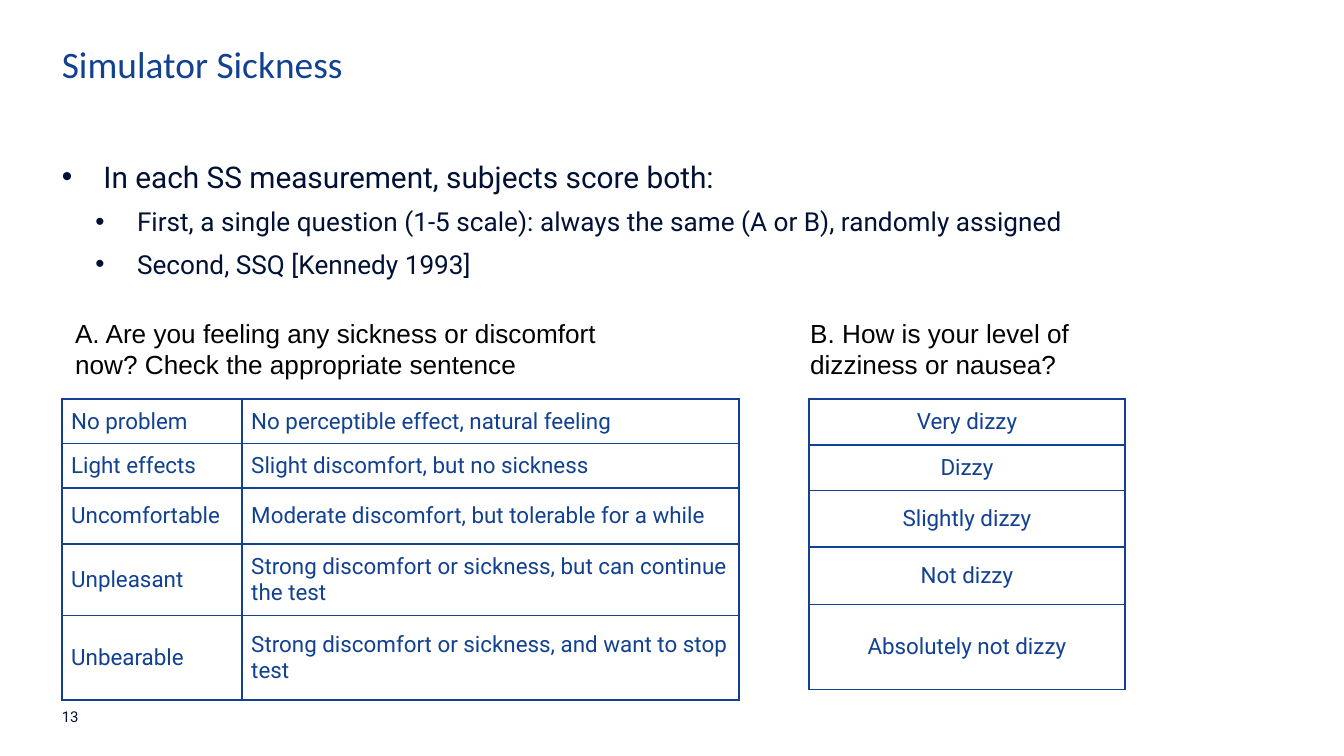
from dataclasses import dataclass

from lxml import etree
from pptx import Presentation
from pptx.dml.color import RGBColor
from pptx.enum import text as t
from pptx.oxml import ns
from pptx.util import Inches, Pt


@dataclass(frozen=True)
class Theme:
    navy: str = "001135"
    blue: str = "124191"
    black: str = "000000"
    heading: str = "Calibri"
    body: str = "Roboto"
    question: str = "Arial"
    bullet: str = "Arial"
    title_size: int = 20
    lead_size: int = 16
    detail_size: int = 14
    cell_size: int = 12
    number_size: int = 8
    border_width: int = 1


THEME = Theme()
LEFT = 0.46
TABLE_TOP = 2.97
QUESTION_TOP = 2.31
CELL_INSET = (0.07, 0.06)

TITLE = "Simulator Sickness"
PAGE_NUMBER = "13"
BULLETS = [
    (0, "In each SS measurement, subjects score both:"),
    (1, "First, a single question (1-5 scale): always the same (A or B), randomly assigned"),
    (1, "Second, SSQ [Kennedy 1993]"),
]
SCALES = [
    {
        "question": "A. Are you feeling any sickness or discomfort now? Check the appropriate sentence",
        "question_left": LEFT,
        "question_width": 4.39,
        "left": LEFT,
        "columns": [1.34, 3.7],
        "heights": [0.33, 0.33, 0.42, 0.53, 0.63],
        "align": t.PP_ALIGN.LEFT,
        "rows": [
            ("No problem", "No perceptible effect, natural feeling"),
            ("Light effects", "Slight discomfort, but no sickness"),
            ("Uncomfortable", "Moderate discomfort, but tolerable for a while"),
            ("Unpleasant", "Strong discomfort or sickness, but can continue the test"),
            ("Unbearable", "Strong discomfort or sickness, and want to stop test"),
        ],
    },
    {
        "question": "B. How is your level of dizziness or nausea?",
        "question_left": 5.93,
        "question_width": 2.44,
        "left": 6.02,
        "columns": [2.35],
        "heights": [0.34, 0.34, 0.42, 0.43, 0.63],
        "align": t.PP_ALIGN.CENTER,
        "rows": [
            ("Very dizzy",),
            ("Dizzy",),
            ("Slightly dizzy",),
            ("Not dizzy",),
            ("Absolutely not dizzy",),
        ],
    },
]


def style(paragraph, name, size, color):
    paragraph.font.name = name
    paragraph.font.size = Pt(size)
    paragraph.font.color.rgb = RGBColor.from_string(color)


def set_insets(target, inset):
    """Set the (horizontal, vertical) margins of a text frame or cell, in inches."""
    target.margin_left = target.margin_right = Inches(inset[0])
    target.margin_top = target.margin_bottom = Inches(inset[1])


def add_frame(page, left, top, width, height, anchor=t.MSO_ANCHOR.TOP, inset=(0, 0)):
    box = page.shapes.add_textbox(Inches(left), Inches(top), Inches(width), Inches(height))
    frame = box.text_frame
    frame.word_wrap = True
    frame.vertical_anchor = anchor
    set_insets(frame, inset)
    return frame


def add_line(frame, words, name, size, color):
    paragraph = frame.paragraphs[0]
    if paragraph.runs:
        paragraph = frame.add_paragraph()
    paragraph.add_run().text = words
    style(paragraph, name, size, color)
    return paragraph


def add_bullet(paragraph, level):
    paragraph.level = level
    paragraph.space_after = Pt(6)
    props = paragraph._p.get_or_add_pPr()
    props.set("marL", str(Inches(0.31 + 0.25 * level)))
    props.set("indent", str(-Inches(0.31)))
    run_defaults = props.find(ns.qn("a:defRPr"))
    run_defaults.addprevious(etree.Element(ns.qn("a:buFont"), typeface=THEME.bullet))
    run_defaults.addprevious(etree.Element(ns.qn("a:buChar"), char="•"))


def add_borders(cell):
    props = cell._tc.get_or_add_tcPr()
    for side in ("lnL", "lnR", "lnT", "lnB"):
        line = etree.SubElement(props, ns.qn(f"a:{side}"), w=str(Pt(THEME.border_width)))
        fill = etree.SubElement(line, ns.qn("a:solidFill"))
        etree.SubElement(fill, ns.qn("a:srgbClr"), val=THEME.blue)


def add_scale(page, scale):
    """Add one rating table and the question above it."""
    rows, columns, heights = scale["rows"], scale["columns"], scale["heights"]
    table = page.shapes.add_table(
        len(rows), len(columns), Inches(scale["left"]), Inches(TABLE_TOP),
        Inches(sum(columns)), Inches(sum(heights))).table
    table.first_row = table.horz_banding = False
    for column, width in zip(table.columns, columns):
        column.width = Inches(width)
    for row, height, labels in zip(table.rows, heights, rows):
        row.height = Inches(height)
        for cell, label in zip(row.cells, labels):
            add_borders(cell)
            cell.fill.background()
            cell.vertical_anchor = t.MSO_ANCHOR.MIDDLE
            set_insets(cell, CELL_INSET)
            paragraph = add_line(cell.text_frame, label, THEME.body, THEME.cell_size, THEME.blue)
            paragraph.alignment = scale["align"]

    frame = add_frame(page, scale["question_left"], QUESTION_TOP, scale["question_width"], 0.57,
                      t.MSO_ANCHOR.MIDDLE, (0.1, 0.05))
    add_line(frame, scale["question"], THEME.question, THEME.detail_size, THEME.black)


def main():
    deck = Presentation()
    deck.slide_width = Inches(10)
    deck.slide_height = deck.slide_width * 9 // 16
    page = deck.slides.add_slide(deck.slide_layouts[6])

    number = add_frame(page, LEFT, 5.27, 0.28, 0.13, t.MSO_ANCHOR.BOTTOM)
    add_line(number, PAGE_NUMBER, THEME.body, THEME.number_size, THEME.navy)

    title = add_frame(page, LEFT, 0.31, 9.09, 0.34)
    add_line(title, TITLE, THEME.heading, THEME.title_size, THEME.blue)

    body = add_frame(page, LEFT, 1.18, 9.09, 3.89)
    for level, words in BULLETS:
        size = THEME.detail_size if level else THEME.lead_size
        add_bullet(add_line(body, words, THEME.body, size, THEME.navy), level)

    for scale in SCALES:
        add_scale(page, scale)
    deck.save("out.pptx")


if __name__ == "__main__":
    main()
